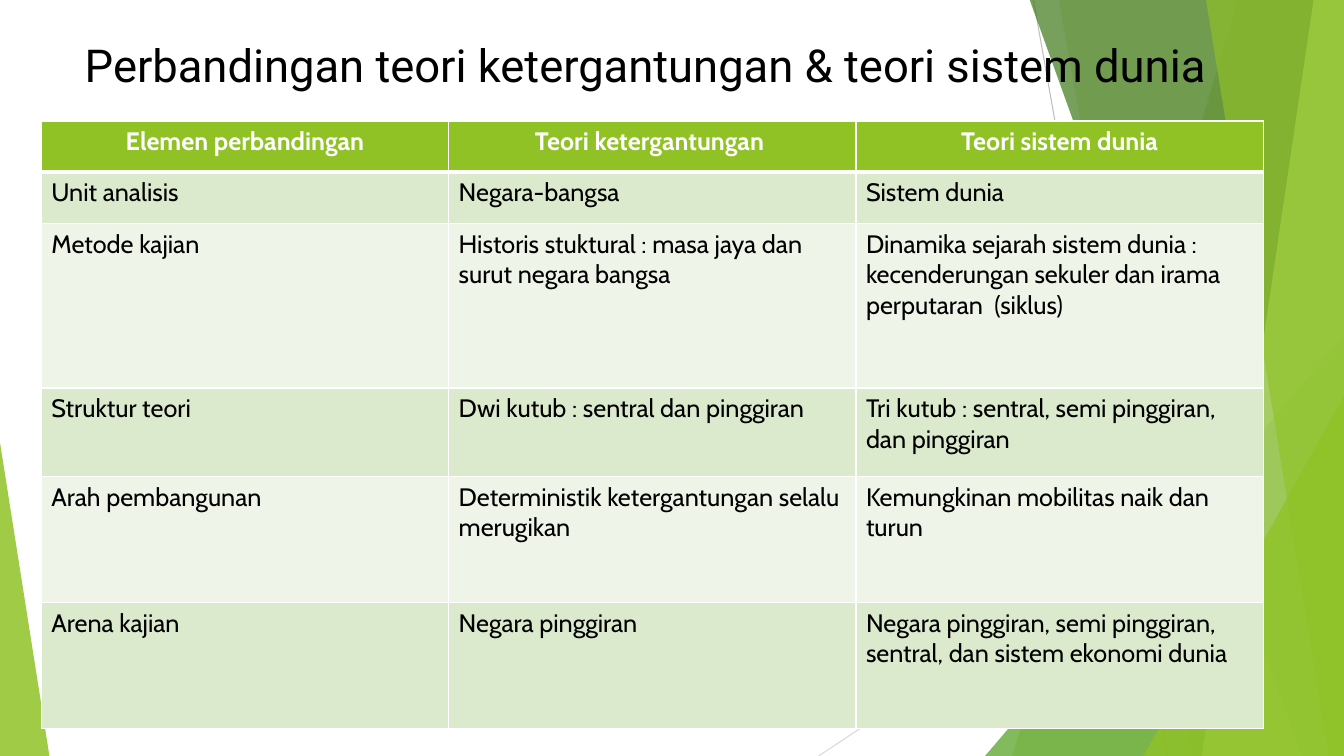
import pptx
import pptx.util
import pptx.dml.color
import pptx.enum.shapes
import pptx.enum.text
import pptx.oxml
import pptx.oxml.ns
from dataclasses import dataclass

Inches = pptx.util.Inches
Pt = pptx.util.Pt
RGB = pptx.dml.color.RGBColor.from_string
ALIGN = pptx.enum.text.PP_ALIGN
NS = pptx.oxml.ns.nsdecls("a")


@dataclass(frozen=True)
class Theme:
    lime: str = "90C226"
    green: str = "54A021"
    forest: str = "3F7819"
    pale: str = "C0E474"
    band_dark: str = "DBE9CD"
    band_light: str = "EEF4E8"
    white: str = "FFFFFF"
    black: str = "000000"
    line_dark: str = "BFBFBF"
    line_light: str = "D9D9D9"
    title_font: str = "Roboto"
    body_font: str = "Cabin"
    title_size: float = 32.4
    body_size: float = 18


T = Theme()
WIDTH, HEIGHT = 13.33, 7.5
LINES = [
    (10.25, 0, 11.58, 7.5, T.line_dark),
    (13.33, 4.03, 8.12, 7.5, T.line_light),
]
FACETS = [
    ("wedge", (12.28, 10.04), T.lime, 30),
    ("wedge", (10.5, 11.83), T.lime, 20),
    ("triangle", (9.77, 3.33, 3.56, 1), T.green, 72),
    ("wedge", (10.21, 12.91), T.forest, 70),
    ("wedge", (13.03, 11.92), T.pale, 70),
    ("wedge", (11.96, 13.18), T.lime, 65),
    ("triangle", (11.34, 3.93, 1.99, 1), T.lime, 80),
    ("triangle", (0, 4.39, 0.49, 0), T.lime, 85),
]
COL_WIDTH = 4.04
ROW_HEIGHTS = [0.51, 0.51, 1.63, 0.88, 1.25, 1.25]
ROWS = [
    ("Elemen perbandingan", "Teori ketergantungan ", "Teori sistem dunia"),
    ("Unit analisis", "Negara-bangsa", "Sistem dunia"),
    ("Metode kajian",
     "Historis stuktural : masa jaya dan surut negara bangsa",
     "Dinamika sejarah sistem dunia : kecenderungan sekuler dan irama perputaran  (siklus)"),
    ("Struktur teori", "Dwi kutub : sentral dan pinggiran",
     "Tri kutub : sentral, semi pinggiran, dan pinggiran"),
    ("Arah pembangunan", "Deterministik ketergantungan selalu merugikan",
     "Kemungkinan mobilitas naik dan turun"),
    ("Arena kajian", "Negara pinggiran",
     "Negara pinggiran, semi pinggiran, sentral, dan sistem ekonomi dunia"),
]


def write(tf, text, color, align, **font):
    p = tf.paragraphs[0]
    p.alignment = align
    r = p.add_run()
    r.text = text
    for name, value in font.items():
        setattr(r.font, name, value)
    r.font.color.rgb = RGB(color)


def paint(sp, color, opacity):
    sp.shadow.inherit = False
    sp.line.fill.background()
    sp.fill.solid()
    sp.fill.fore_color.rgb = RGB(color)
    clr = sp.fill._xPr.find(".//" + pptx.oxml.ns.qn("a:srgbClr"))
    clr.append(pptx.oxml.parse_xml(f'<a:alpha {NS} val="{opacity * 1000}"/>'))


def add_wedge(s, right, bottom, x_top, x_bottom):
    fb = s.shapes.build_freeform(Inches(x_top), Inches(-0.01))
    corners = [(right, -0.01), (right, bottom), (x_bottom, bottom)]
    fb.add_line_segments([(Inches(x), Inches(y)) for x, y in corners])
    return fb.convert_to_shape()


def add_triangle(s, bottom, x, y, w, apex):
    kind = pptx.enum.shapes.MSO_SHAPE.ISOSCELES_TRIANGLE
    sp = s.shapes.add_shape(kind, Inches(x), Inches(y), Inches(w), Inches(bottom - y))
    sp.adjustments[0] = apex
    return sp


def add_backdrop(s, right, bottom):
    for x1, y1, x2, y2, color in LINES:
        cx = s.shapes.add_connector(
            pptx.enum.shapes.MSO_CONNECTOR.STRAIGHT,
            Inches(x1), Inches(y1), Inches(x2), Inches(y2))
        cx.line.width = Pt(0.75)
        cx.line.color.rgb = RGB(color)
        cx._element.spPr.append(pptx.oxml.parse_xml(f"<a:effectLst {NS}/>"))
    for kind, place, color, opacity in FACETS:
        if kind == "wedge":
            sp = add_wedge(s, right, bottom, *place)
        else:
            sp = add_triangle(s, bottom, *place)
        paint(sp, color, opacity)


def add_title(s, text, x, y, w, h):
    sp = s.shapes.title
    s.shapes._spTree.append(sp._element)
    box = dict(left=x, top=y, width=w, height=h)
    for name, value in box.items():
        setattr(sp, name, Inches(value))
    tf = sp.text_frame
    frame = dict(word_wrap=True, vertical_anchor=pptx.enum.text.MSO_ANCHOR.TOP,
                 auto_size=pptx.enum.text.MSO_AUTO_SIZE.NONE)
    for name, value in frame.items():
        setattr(tf, name, value)
    write(tf, text, T.black, ALIGN.LEFT, name=T.title_font, size=Pt(T.title_size))


def add_borders(cell, **widths):
    tcPr = cell._tc.get_or_add_tcPr()
    for side, width in widths.items():
        tcPr.append(pptx.oxml.parse_xml(
            f'<a:ln{side} {NS} w="{Pt(width)}"><a:solidFill>'
            f'<a:srgbClr val="{T.white}"/></a:solidFill></a:ln{side}>'))


def add_comparison(s, x, y):
    cols = len(ROWS[0])
    table = s.shapes.add_table(
        len(ROWS), cols, Inches(x), Inches(y),
        Inches(COL_WIDTH * cols), Inches(sum(ROW_HEIGHTS))).table
    for col in table.columns:
        col.width = Inches(COL_WIDTH)
    for i, (row, height) in enumerate(zip(ROWS, ROW_HEIGHTS)):
        table.rows[i].height = Inches(height)
        header = i == 0
        fill = T.lime if header else (T.band_light, T.band_dark)[i % 2]
        for j, text in enumerate(row):
            cell = table.cell(i, j)
            add_borders(cell, L=1, R=1, T=3 if i == 1 else 1, B=3 if header else 1)
            cell.fill.solid()
            cell.fill.fore_color.rgb = RGB(fill)
            write(cell.text_frame, text, T.white if header else T.black,
                  ALIGN.CENTER if header else ALIGN.LEFT,
                  name=T.body_font, size=Pt(T.body_size), bold=header)


def main():
    prs = pptx.Presentation()
    prs.slide_width, prs.slide_height = Inches(WIDTH), Inches(HEIGHT)
    s = prs.slides.add_slide(prs.slide_layouts[5])
    add_backdrop(s, WIDTH, HEIGHT)
    add_title(s, "Perbandingan teori ketergantungan & teori sistem dunia",
              0.74, 0.32, 12.38, 1.18)
    add_comparison(s, 0.41, 1.2)
    prs.save("out.pptx")


if __name__ == "__main__":
    main()
